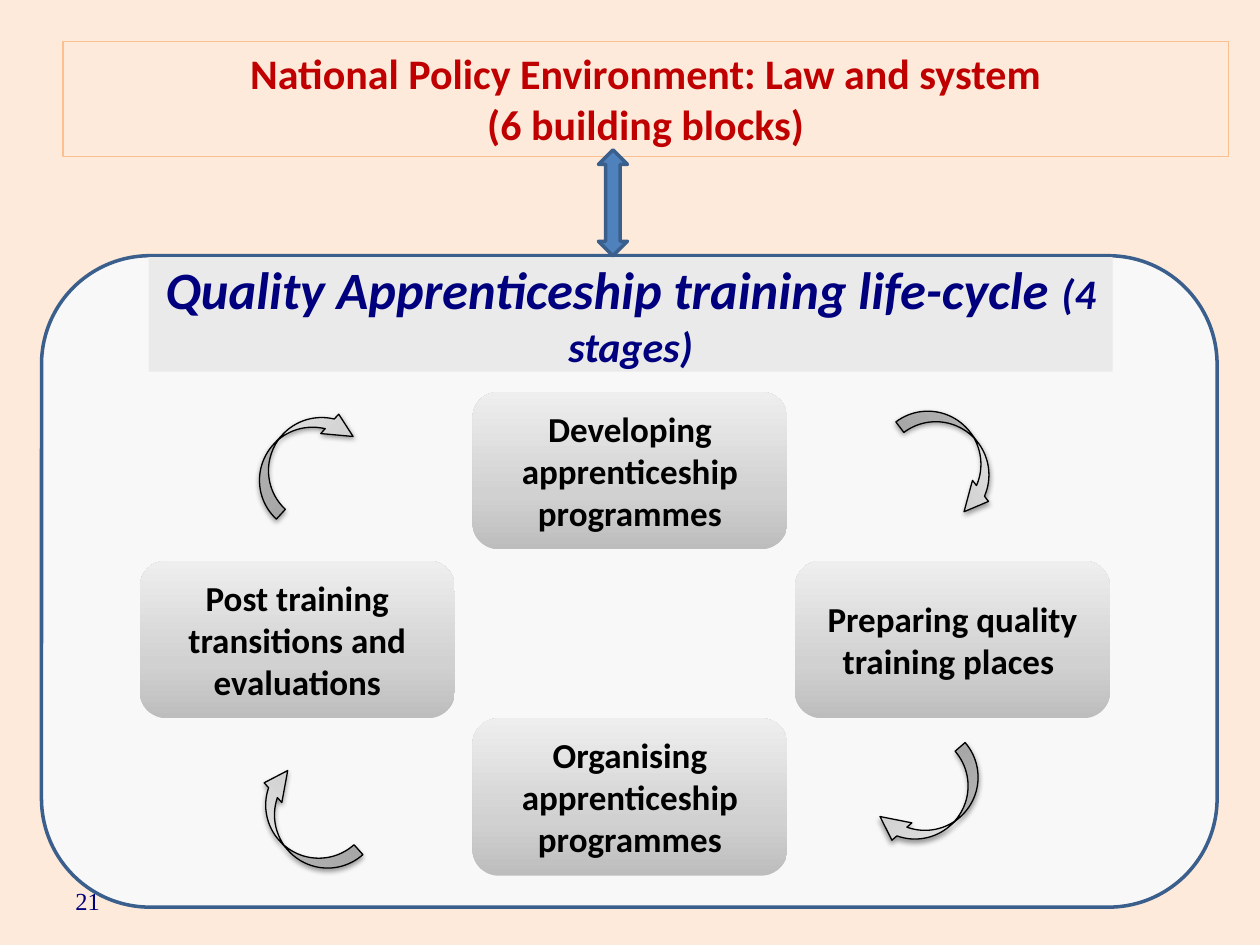
from lxml.etree import SubElement
from pptx import Presentation
from pptx.dml.color import RGBColor
from pptx.enum.shapes import MSO_SHAPE as Shape
from pptx.enum.text import MSO_ANCHOR as Anchor, MSO_AUTO_SIZE as AutoSize, PP_ALIGN as Align
from pptx.oxml import parse_xml
from pptx.oxml.ns import nsdecls, qn
from pptx.util import Inches, Pt

rgb = RGBColor.from_string
deck = Presentation()
deck.slide_width, deck.slide_height = Inches(10), Inches(7.5)
COL, ROW = deck.slide_width / 100, deck.slide_height / 75  # grid of 100 x 75

slide = deck.slides.add_slide(deck.slide_layouts[5])
slide.background.fill.solid()
slide.background.fill.fore_color.rgb = rgb("FDEADA")

GRADIENT = (
    f'<a:gradFill {nsdecls("a")} rotWithShape="1"><a:gsLst>'
    + "".join(f'<a:gs pos="{pos}000"><a:srgbClr val="{color}"/></a:gs>'
              for pos, color in ((0, "BDBDBD"), (35, "D1D1D1"), (100, "EEEEEE")))
    + '</a:gsLst><a:lin ang="16200000" scaled="1"/></a:gradFill>')


def add_block(kind, left, top, width, height, fill=None, line=None, weight=0.75):
    """Place a shape on the grid; without a fill colour it gets the grey gradient."""
    block = slide.shapes.add_shape(
        kind, *(round(n) for n in (left * COL, top * ROW, width * COL, height * ROW)))
    block.shadow.inherit = False
    if fill:
        block.fill.solid()
        block.fill.fore_color.rgb = rgb(fill)
    else:
        block.fill.background()
        no_fill = block._element.spPr.find(qn("a:noFill"))
        no_fill.getparent().replace(no_fill, parse_xml(GRADIENT))
    if line:
        block.line.color.rgb = rgb(line)
        block.line.width = Pt(weight)
    else:
        block.line.fill.background()
    return block


def style(paragraph, size, color, align=Align.CENTER, font="Calibri", bold=True, italic=False):
    paragraph.alignment = align
    paragraph.font.name, paragraph.font.size = font, Pt(size)
    paragraph.font.bold, paragraph.font.italic = bold, italic
    paragraph.font.color.rgb = rgb(color)


# Life-cycle panel and page number
add_block(Shape.ROUNDED_RECTANGLE, 3.3, 20.3, 93.3, 51.7, "F8F8F8", "3A5F8C", 2)
page = slide.shapes.add_textbox(
    *(round(n) for n in (5 * COL, 69.5 * ROW, 23.3 * COL, 4 * ROW))).text_frame
page.word_wrap = True
page.vertical_anchor = Anchor.MIDDLE
page.text = "21"
style(page.paragraphs[0], 14, "00007F", Align.LEFT, "Times New Roman", bold=False)

# Four stages, clockwise from the top
stages = [
    ("Developing apprenticeship programmes", 37.5, 31.1),
    ("Preparing quality training places ", 63.1, 44.5),
    ("Organising apprenticeship programmes", 37.5, 57),
    ("Post training transitions and evaluations", 11.1, 44.5),
]
for label, left, top in stages:
    stage = add_block(Shape.ROUNDED_RECTANGLE, left, top, 25, 12.5).text_frame
    stage.word_wrap = True
    stage.vertical_anchor = Anchor.MIDDLE
    stage.text = label
    style(stage.paragraphs[0], 20, "000000")

# Curved arrows between the stages
for left, top, turn in ((18.8, 34, 312.9), (70.8, 34.1, 52.8),
                        (69.2, 61.7, 139), (18.9, 63.4, 228.2)):
    arrow = add_block(Shape.CURVED_DOWN_ARROW, left, top, 10, 4.2, line="000000")
    arrow.rotation = turn
    for i, share in enumerate((0.25, 0.5, 0.485)):
        arrow.adjustments[i] = share
    shadow = SubElement(arrow._element.spPr.find(qn("a:effectLst")), qn("a:outerShdw"),
                        blurRad=str(Pt(3.1)), dist=str(Pt(1.6)), dir="5400000", rotWithShape="0")
    shade = SubElement(shadow, qn("a:srgbClr"), val="000000")
    SubElement(shade, qn("a:alpha"), val="38000")

# Life-cycle heading
heading = add_block(Shape.RECTANGLE, 11.8, 20.4, 76.5, 9.1, "EAEAEA").text_frame
heading.word_wrap = True
heading.auto_size = AutoSize.SHAPE_TO_FIT_TEXT
heading.vertical_anchor = Anchor.TOP
heading.margin_top = heading.margin_bottom = 0
cycle = heading.paragraphs[0]
style(cycle, 30, "00007F", italic=True)
cycle.add_run().text = "Quality Apprenticeship training life-cycle "
count = cycle.add_run()
count.text = "(4 stages)"
count.font.size = Pt(24)

# Policy title
policy = slide.shapes.title
policy.left, policy.top = round(5 * COL), round(3.3 * ROW)
policy.width, policy.height = round(92.5 * COL), round(9.1 * ROW)
policy.line.color.rgb = rgb("FAC090")
policy.line.width = Pt(0.75)
policy.text_frame.text = "National Policy Environment: Law and system\n(6 building blocks)"
policy.text_frame.word_wrap = True
policy.text_frame.auto_size = AutoSize.SHAPE_TO_FIT_TEXT
policy.text_frame.vertical_anchor = Anchor.TOP
for paragraph in policy.text_frame.paragraphs:
    style(paragraph, 24, "C00000")

# Link between policy and life-cycle
add_block(Shape.UP_DOWN_ARROW, 47.5, 11.9, 2.3, 8.4, "4F81BD", "3A5F8C", 2)

deck.save("out.pptx")
